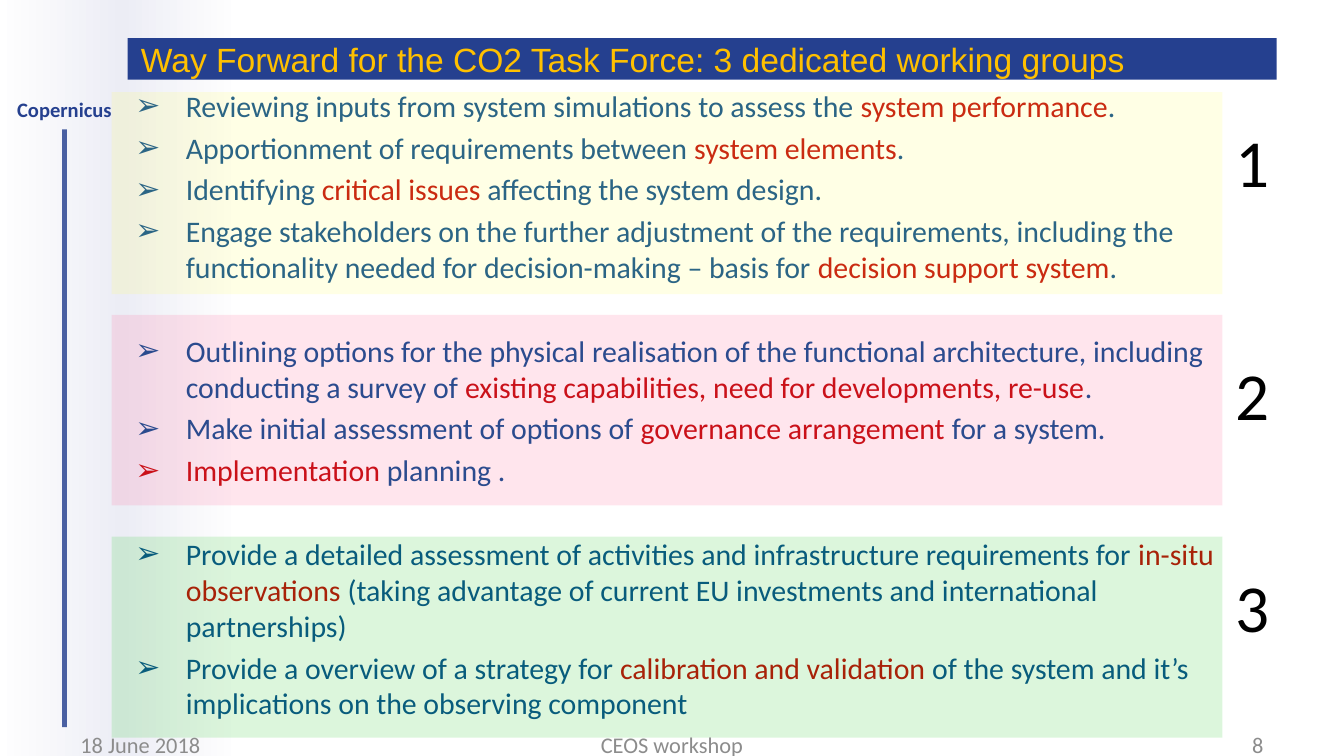
from lxml import etree
from pptx import Presentation
from pptx.dml.color import RGBColor
from pptx.enum.shapes import MSO_CONNECTOR, MSO_SHAPE
from pptx.enum.text import MSO_ANCHOR, PP_ALIGN
from pptx.oxml import parse_xml
from pptx.oxml.ns import nsdecls, qn
from pptx.util import Inches, Pt

RECTANGLE = MSO_SHAPE.RECTANGLE
STRAIGHT = MSO_CONNECTOR.STRAIGHT
TOP, MIDDLE = MSO_ANCHOR.TOP, MSO_ANCHOR.MIDDLE
LEFT, CENTER, RIGHT = PP_ALIGN.LEFT, PP_ALIGN.CENTER, PP_ALIGN.RIGHT

WHITE = RGBColor(0xFF, 0xFF, 0xFF)
BLACK = RGBColor(0x00, 0x00, 0x00)
NAVY = RGBColor(0x25, 0x40, 0x8F)
BLUE = RGBColor(0x00, 0x46, 0x8C)
RED = RGBColor(0xC0, 0x00, 0x00)
GOLD = RGBColor(0xFF, 0xC0, 0x00)
GRAY = RGBColor(0x8C, 0x8C, 0x8C)
LAVENDER = RGBColor(0xDC, 0xDE, 0xED)
YELLOW = RGBColor(0xFF, 0xFF, 0x66)
PINK = RGBColor(0xFF, 0x66, 0x99)
GREEN = RGBColor(0x33, 0xCC, 0x33)

# A 16:9 slide
deck = Presentation()
deck.slide_width = Inches(10)
deck.slide_height = deck.slide_width * 9 // 16
slide = deck.slides.add_slide(deck.slide_layouts[6])

# The grid has 100 columns and 100 rows
COL, ROW = deck.slide_width / 100, deck.slide_height / 100
HANGING = round(3.75 * COL)


def box(x, y, width, height, color=None, opacity=100):
    """Place a filled rectangle, or a text box when there is no colour."""
    area = [round(n) for n in (x * COL, y * ROW, width * COL, height * ROW)]
    if color is None:
        return slide.shapes.add_textbox(*area)
    shape = slide.shapes.add_shape(RECTANGLE, *area)
    shape.shadow.inherit = False
    shape.line.fill.background()
    shape.fill.solid()
    shape.fill.fore_color.rgb = color
    if opacity < 100:
        tint = shape.fill._xPr.find(".//" + qn("a:srgbClr"))
        etree.SubElement(tint, qn("a:alpha"), val=str(opacity * 1000))
    return shape


def write(shape, text, *, size, color, font="Calibri", bold=False,
          align=LEFT, anchor=TOP, before=0, bullet=None):
    """Add a paragraph; the parts between asterisks are red."""
    frame = shape.text_frame
    frame.word_wrap = True
    frame.vertical_anchor = anchor
    paragraph = frame.add_paragraph() if frame.text else frame.paragraphs[0]
    paragraph.alignment = align
    paragraph.space_before = Pt(before)
    if bullet:
        properties = paragraph._p.get_or_add_pPr()
        properties.set("marL", str(HANGING))
        properties.set("indent", str(-HANGING))
        etree.SubElement(properties, qn("a:buFont"), typeface="Arial")
        etree.SubElement(properties, qn("a:buChar"), char=bullet)
    for index, part in enumerate(text.split("*")):
        if part:
            run = paragraph.add_run()
            run.text = part
            run.font.name, run.font.size, run.font.bold = font, Pt(size), bold
            run.font.color.rgb = RED if index % 2 else color


# Shaded left margin under a white veil
margin = box(0, 0, 22.7, 100, WHITE)
stops = "".join(
    f'<a:gs pos="{share * 1000}"><a:srgbClr val="{color}"/></a:gs>'
    for share, color in ((0, WHITE), (40, LAVENDER), (78, WHITE)))
solid = margin.fill._xPr.find(qn("a:solidFill"))
solid.getparent().replace(solid, parse_xml(
    f'<a:gradFill {nsdecls("a")}><a:gsLst>{stops}</a:gsLst>'
    '<a:lin ang="0" scaled="0"/></a:gradFill>'))
box(0, 0, 22.7, 100, WHITE, 48)

# Programme name and vertical rule
rule = slide.shapes.add_connector(
    STRAIGHT, round(4.8 * COL), round(17.1 * ROW), round(4.8 * COL), round(96.2 * ROW))
rule.line.color.rgb = NAVY
rule.line.width = Pt(2.5)
rule_color = rule.line.fill._xPr.find(".//" + qn("a:srgbClr"))
etree.SubElement(rule_color, qn("a:alpha"), val="81000")
etree.SubElement(rule._element.spPr, qn("a:effectLst"))
write(box(-0.35, 12, 10.3, 5.2), "Copernicus",
      size=11, color=NAVY, bold=True, align=CENTER)

# Title
write(box(9.5, 5.05, 85.5, 5.5, NAVY),
      "Way Forward for the CO2 Task Force: 3 dedicated working groups",
      size=18, color=GOLD, font="Arial", anchor=MIDDLE)

# Tasks of the working groups
working_groups = [
    ["Reviewing inputs from system simulations to assess the *system performance*.",
     "Apportionment of requirements between *system elements*.",
     "Identifying *critical issues *affecting the system design.",
     "Engage stakeholders on the further adjustment of the requirements, including "
     "the functionality needed for decision-making – basis for "
     "*decision support system*."],
    ["Outlining options for the physical realisation of the functional architecture, "
     "including conducting a survey of "
     "*existing capabilities, need for developments, re-use*.",
     "Make initial assessment of options of *governance arrangement *for a system.",
     "*Implementation *planning ."],
    ["Provide a detailed assessment of activities and infrastructure requirements for "
     "*in-situ observations *(taking advantage of current EU investments and "
     "international partnerships)",
     "Provide a overview of a strategy for *calibration and validation *of the system "
     "and it’s implications on the observing component"],
]
tasks = box(9.1, 10.7, 85.3, 77.2)
for group_index, group in enumerate(working_groups):
    for task_index, task in enumerate(group):
        group_gap = 25.7 if group_index else 0
        write(tasks, task, size=16, color=BLUE, bullet="➢",
              before=3.2 if task_index else group_gap)

# Tinted band and number of each group
bands = [(12.2, 26.7, YELLOW, 15), (41.65, 25.2, PINK, 45.9), (71, 26.6, GREEN, 73.85)]
for number, (top, height, tint, number_top) in enumerate(bands, start=1):
    box(8.3, top, 82.65, height, tint, 17)
    write(box(90.95, number_top, 4.2, 12.6), str(number), size=36, color=BLACK)

# Footer
footer = [(5, 23.3, "18 June 2018", LEFT),
          (34.2, 31.6, "CEOS workshop", CENTER),
          (71.7, 23.3, "8", RIGHT)]
for left, width, text, align in footer:
    write(box(left, 95.9, width, 5.3), text,
          size=12, color=GRAY, align=align, anchor=MIDDLE)

deck.save("out.pptx")
